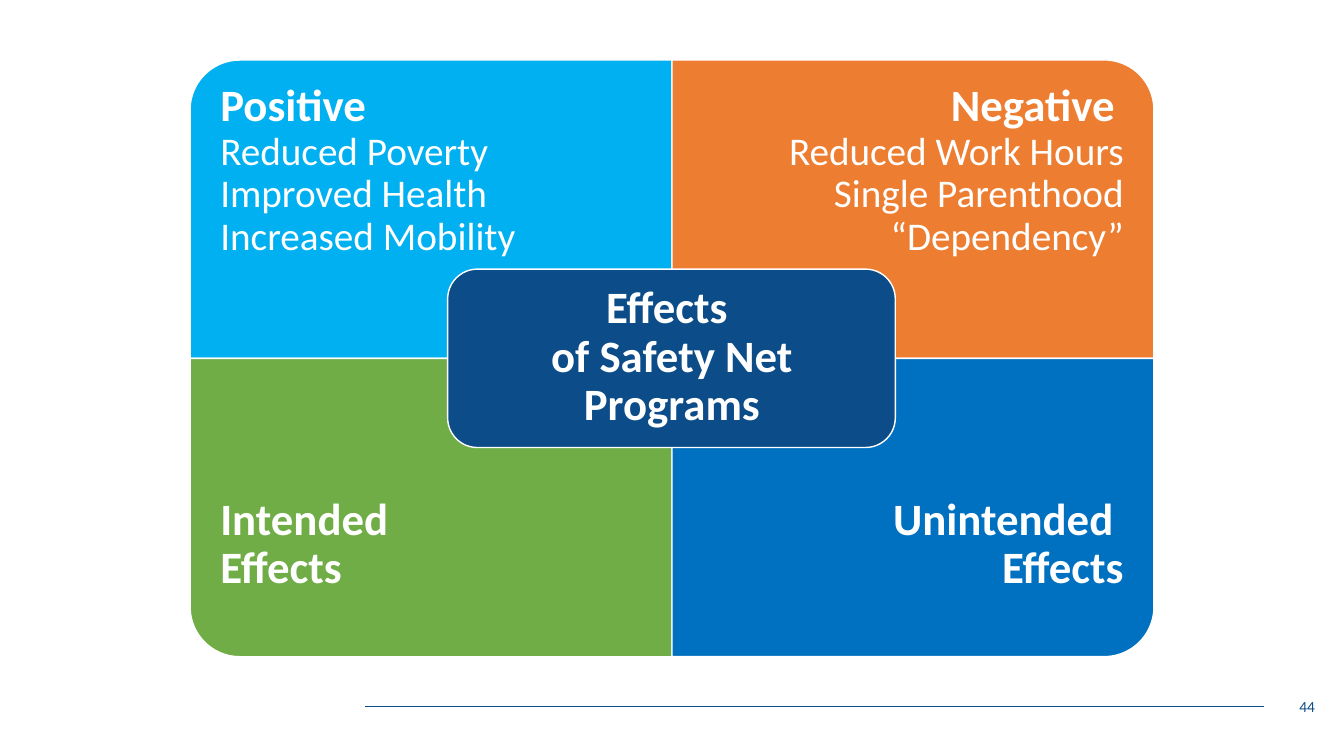
from pptx import Presentation
from pptx.util import Inches, Pt
from pptx.dml.color import RGBColor as RGB
from pptx.enum.shapes import MSO_SHAPE as Shape, MSO_CONNECTOR as Conn
from pptx.enum.text import MSO_ANCHOR as Anchor, PP_ALIGN as Align
from pptx.oxml.ns import qn
from lxml import etree

COLORS = {
    "white": "FFFFFF", "navy": "0C4C88", "sky": "00B0F0",
    "orange": "ED7D31", "green": "70AD47", "blue": "0070C0",
}

deck = Presentation()
deck.slide_width, deck.slide_height = Inches(13.33), Inches(7.5)
slide = deck.slides.add_slide(deck.slide_layouts[6])
shapes = slide.shapes


def text(runs, x, y, w, h, align=Align.LEFT, anchor=Anchor.MIDDLE,
         pads=(0.1, 0.05, 0.1, 0.05), color="white", space=0.9):
    """Add one paragraph; runs are (words, size, bold), newlines break lines."""
    frame = shapes.add_textbox(Inches(x), Inches(y), Inches(w), Inches(h)).text_frame
    frame.word_wrap = True
    frame.vertical_anchor = anchor
    frame.margin_left, frame.margin_top, frame.margin_right, frame.margin_bottom = map(Inches, pads)
    para = frame.paragraphs[0]
    para.alignment, para.line_spacing = align, space
    for words, size, bold in runs:
        for i, line in enumerate(words.split("\n")):
            if i:
                para.add_line_break()
            if line:
                run = para.add_run()
                run.text = line
                run.font.name, run.font.size, run.font.bold = "Calibri", Pt(size), bold
                run.font.color.rgb = RGB.from_string(COLORS[color])


def block(kind, x, y, w, h, color, turn=0):
    """Add a filled shape with a thin white outline."""
    box = shapes.add_shape(kind, Inches(x), Inches(y), Inches(w), Inches(h))
    box.shadow.inherit = False
    box.rotation = turn
    box.fill.solid()
    box.fill.fore_color.rgb = RGB.from_string(COLORS[color])
    box.line.color.rgb = RGB.from_string(COLORS["white"])
    box.line.width = Pt(1)


# Footer rule
rule = shapes.add_connector(Conn.STRAIGHT, Inches(3.62), Inches(7.01), Inches(12.54), Inches(7.01))
rule.line.color.rgb = RGB.from_string(COLORS["navy"])
rule.line.width = Pt(0.5)
etree.SubElement(rule._element.spPr, qn("a:effectLst"))

# Four quadrants: column, row, color, turn of the round corner, runs
LEFT, TOP, WIDE, HIGH, TALL = 1.885, 0.595, 4.78, 2.96, 2.22
quads = [
    (0, 0, "sky", 270, [("Positive\n", 32, True),
                        ("Reduced Poverty\nImproved Health\nIncreased Mobility", 28, False)]),
    (1, 0, "orange", 0, [("Negative", 32, True),
                         (" \nReduced Work Hours\nSingle Parenthood\n“Dependency”", 28, False)]),
    (0, 1, "green", 180, [("Intended \nEffects", 32, True)]),
    (1, 1, "blue", 90, [("Unintended \nEffects", 32, True)]),
]
for col, row, color, turn, runs in quads:
    x, y = LEFT + col * WIDE, TOP + row * HIGH
    # A quarter turn swaps width and height around the same center
    w, h = (HIGH, WIDE) if turn in (90, 270) else (WIDE, HIGH)
    block(Shape.ROUND_1_RECTANGLE, x + (WIDE - w) / 2, y + (HIGH - h) / 2, w, h, color, turn)
    text(runs, x, y + row * (HIGH - TALL), WIDE, TALL,
         align=Align.RIGHT if col else Align.LEFT,
         anchor=Anchor.MIDDLE if row else Anchor.BOTTOM,
         pads=(0.25, 0.25, 0.3, 0.25) if col else (0.3, 0.25, 0.25, 0.25))

# Center title
block(Shape.ROUNDED_RECTANGLE, 4.44, 2.67, 4.44, 1.77, "navy")
text([("Effects \nof Safety Net Programs", 32, True)], 4.53, 2.75, 4.27, 1.6,
     align=Align.CENTER, pads=(0.13,) * 4)

# Page number
text([("44", 11, False)], 10.14, 6.81, 3, 0.4, align=Align.RIGHT, color="navy", space=1.0)

deck.save("out.pptx")
